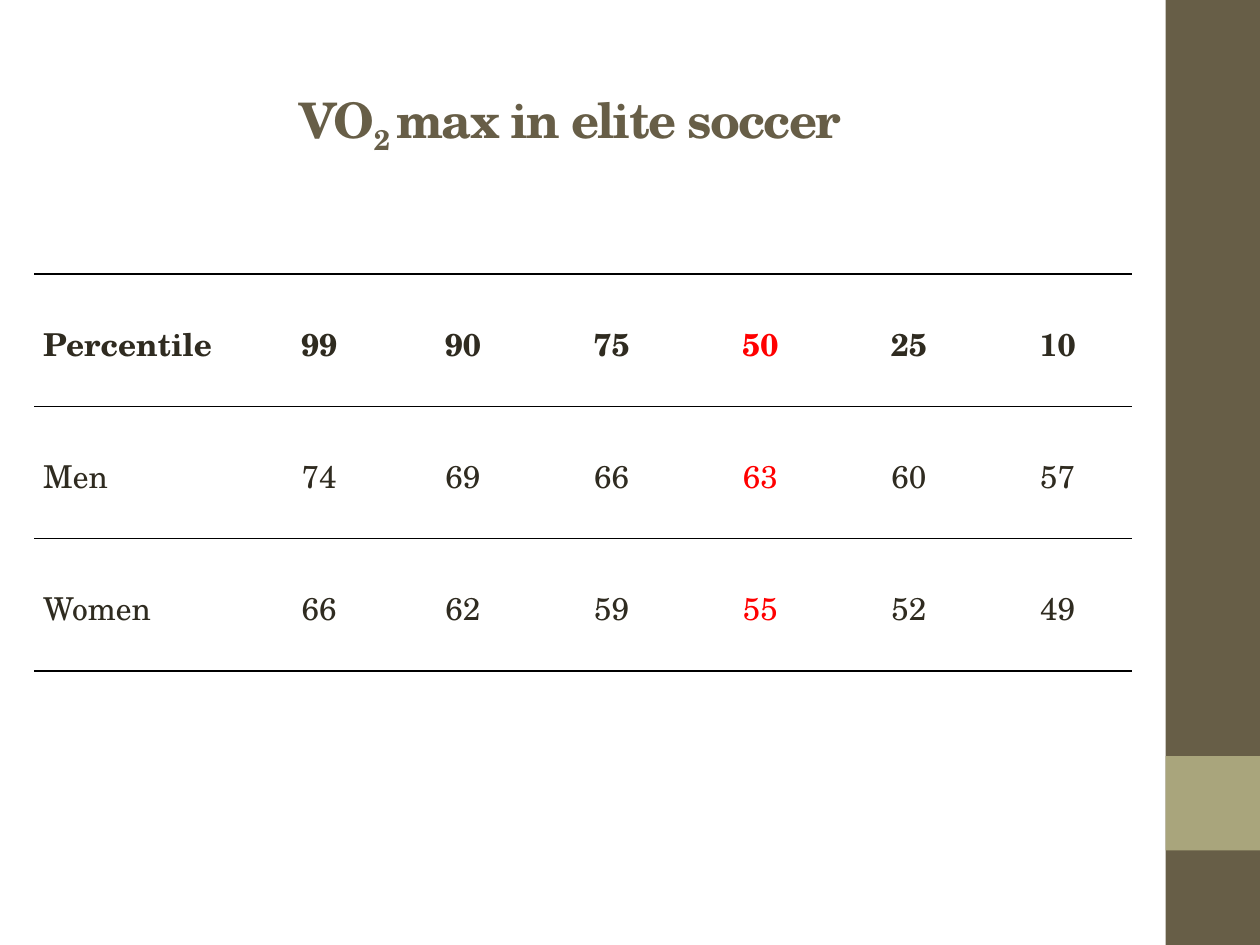
from lxml.etree import SubElement
from pptx import Presentation
from pptx.dml.color import RGBColor
from pptx.enum.shapes import MSO_SHAPE
from pptx.enum.text import MSO_ANCHOR, PP_ALIGN
from pptx.oxml.ns import qn
from pptx.util import Pt

BROWN = RGBColor(0x67, 0x5E, 0x47)
OLIVE = RGBColor(0xA9, 0xA5, 0x7C)
INK = RGBColor(0x2F, 0x2B, 0x20)
RED = RGBColor(0xFF, 0x00, 0x00)
NO_STYLE = "{2D5ABB26-0587-4C30-8999-92F81FD0307C}"

ROWS = [
    ["Percentile", "99", "90", "75", "50", "25", "10"],
    ["Men", "74", "69", "66", "63", "60", "57"],
    ["Women", "66", "62", "59", "55", "52", "49"],
]
COL_WIDTHS = [123.1, 79.2] + [85] * 5
ROW_HEIGHT = 75.6
MEDIAN_COL = 4


class SlideBuilder:
    font = "TeX Gyre Schola"

    def __init__(self, prs):
        self.s = prs.slides.add_slide(prs.slide_layouts[5])

    def style(self, r, size, color, bold):
        r.font.name = self.font
        r.font.size = Pt(size)
        r.font.color.rgb = color
        r.font.bold = bold

    def band(self, left, top, width, height, color):
        sp = self.s.shapes.add_shape(MSO_SHAPE.RECTANGLE, Pt(left), Pt(top),
                                     Pt(width), Pt(height))
        sp.shadow.inherit = False
        sp.fill.solid()
        sp.fill.fore_color.rgb = color
        sp.line.fill.background()

    def title(self, left, top, width, height, parts):
        sp = self.s.shapes.title
        sp.left, sp.top, sp.width, sp.height = map(Pt, (left, top, width, height))
        tf = sp.text_frame
        tf.word_wrap = True
        tf.vertical_anchor = MSO_ANCHOR.MIDDLE
        p = tf.paragraphs[0]
        p.alignment = PP_ALIGN.CENTER
        for text, baseline in parts:
            r = p.add_run()
            r.text = text
            self.style(r, 28, BROWN, True)
            r.font._element.set("spc", "-100")
            if baseline:
                r.font._element.set("baseline", str(baseline))

    def rule(self, cell, side, width):
        ln = SubElement(cell._tc.get_or_add_tcPr(), qn(f"a:{side}"), w=str(Pt(width)))
        fill = SubElement(ln, qn("a:solidFill"))
        SubElement(fill, qn("a:srgbClr"), val="000000")

    def cell(self, cell, text, color, bold, align):
        cell.margin_left = cell.margin_right = Pt(5)
        cell.margin_top = cell.margin_bottom = 0
        cell.vertical_anchor = MSO_ANCHOR.MIDDLE
        cell.fill.background()
        cell.text_frame.text = text
        p = cell.text_frame.paragraphs[0]
        p.alignment = align
        p.line_spacing = 1.15
        self.style(p.runs[0], 18, color, bold)

    def table(self, left, top, rows, widths, row_height):
        frame = self.s.shapes.add_table(len(rows), len(widths), Pt(left), Pt(top),
                                        Pt(sum(widths)), Pt(row_height * len(rows)))
        table = frame.table
        table.first_row = table.horz_banding = False
        table._tbl.tblPr.find(qn("a:tableStyleId")).text = NO_STYLE
        for column, width in zip(table.columns, widths):
            column.width = Pt(width)
        last = len(rows) - 1
        for i, values in enumerate(rows):
            table.rows[i].height = Pt(row_height)
            for j, text in enumerate(values):
                cell = table.cell(i, j)
                # Rules above and below the header, and below the last row
                if i < 2:
                    self.rule(cell, "lnT", 1)
                if i in (0, last):
                    self.rule(cell, "lnB", 1)
                self.cell(cell, text, RED if j == MEDIAN_COL else INK, i == 0,
                          PP_ALIGN.CENTER if j else PP_ALIGN.LEFT)


def main():
    prs = Presentation()
    prs.slide_width, prs.slide_height = Pt(720), Pt(540)
    slide = SlideBuilder(prs)

    # Side band with its accent square
    slide.band(666, 0, 54, 540, BROWN)
    slide.band(666, 432, 54, 54, OLIVE)

    # Title
    slide.title(54.7, 39.6, 542.2, 61.2,
                [("VO", 0), ("2 ", -25000), ("max in elite soccer", 0)])

    # Percentile table
    slide.table(19.7, 156.7, ROWS, COL_WIDTHS, ROW_HEIGHT)

    prs.save("out.pptx")


if __name__ == "__main__":
    main()
